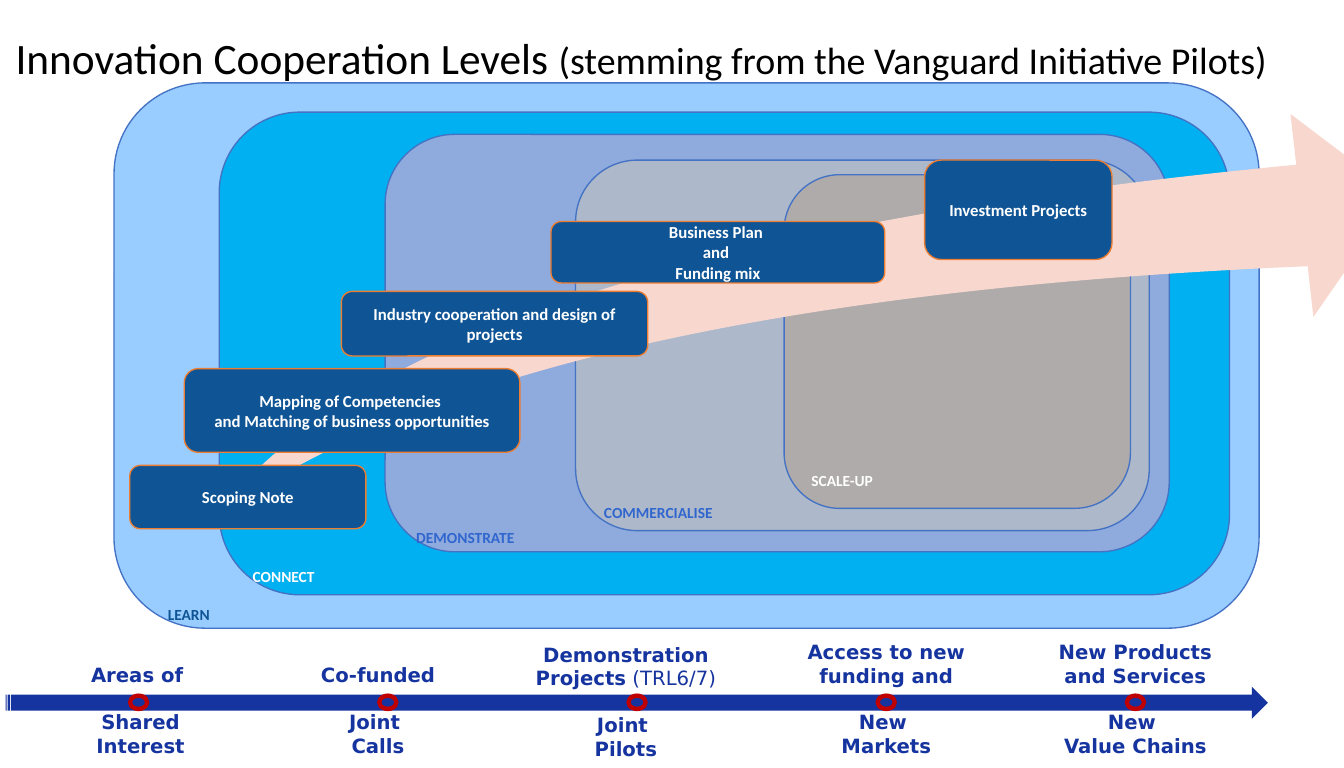
import pptx
import pptx.util
import pptx.dml.color
import pptx.enum.shapes
import pptx.enum.text

Cm, Pt = pptx.util.Cm, pptx.util.Pt
hue = pptx.dml.color.RGBColor.from_string
KIND = pptx.enum.shapes.MSO_SHAPE
ALIGN = pptx.enum.text.PP_ALIGN
ANCHOR = pptx.enum.text.MSO_ANCHOR
FIT = pptx.enum.text.MSO_AUTO_SIZE


def draw(kind, spot, fill, edge=None, width=1):
    shape = slide.shapes.add_shape(kind, *[Cm(n) for n in spot])
    shape.shadow.inherit = False
    shape.fill.solid()
    shape.fill.fore_color.rgb = hue(fill)
    if edge:
        shape.line.color.rgb = hue(edge)
        shape.line.width = Pt(width)
    else:
        shape.line.fill.background()
    return shape


def write(para, text, color, look):
    for row, part in enumerate(text.split("\n")):
        if row:
            para.add_line_break()
        run = para.add_run()
        run.text = part
        run.font.color.rgb = hue(color)
        for name, value in look.items():
            setattr(run.font, name, value)


deck = pptx.Presentation()
deck.slide_width, deck.slide_height = Cm(35), Cm(20)
slide = deck.slides.add_slide(deck.slide_layouts[5])

title = slide.shapes.title
title.left, title.top, title.width, title.height = Cm(0.15), Cm(0.69), Cm(34.85), Cm(2.29)
frame = title.text_frame
frame.word_wrap = True
frame.auto_size = FIT.NONE
frame.vertical_anchor = ANCHOR.TOP
para = frame.paragraphs[0]
para.alignment = ALIGN.LEFT
write(para, "Innovation Cooperation Levels ", "000000", {"name": "Calibri", "size": Pt(32)})
write(para, "(stemming from the Vanguard Initiative Pilots)", "000000",
      {"name": "Calibri", "size": Pt(28)})

levels = [
    ("LEARN", (2.97, 2.16, 29.82, 14.2), "99CCFF", "0F5494", 4.37, 16),
    ("CONNECT", (5.71, 2.92, 26.31, 12.57), "00B0F0", "FFFFFF", 6.58, 15),
    ("DEMONSTRATE", (10.03, 3.5, 20.42, 10.87), "8FAADC", "3166CF", 10.84, 13.99),
    ("COMMERCIALISE", (14.99, 4.17, 14.94, 9.65), "ADB9CA", "3166CF", 15.73, 13.34),
    ("SCALE-UP", (20.42, 4.55, 9.02, 8.69), "AFABAB", "FFFFFF", 21.13, 12.5),
]
small = {"name": "Calibri", "size": Pt(11.4), "bold": True}
for text, spot, fill, color, left, mid in levels:
    draw(KIND.ROUNDED_RECTANGLE, spot, fill, "4472C4")
    label = slide.shapes.add_textbox(Cm(left), Cm(mid - 0.3), Cm(4), Cm(0.6))
    frame = label.text_frame
    frame.word_wrap = True
    frame.vertical_anchor = ANCHOR.MIDDLE
    for side in ("left", "top", "right", "bottom"):
        setattr(frame, "margin_" + side, 0)
    write(frame.paragraphs[0], text, color, small)

swoosh = draw(KIND.SWOOSH_ARROW, (5.54, 2.97, 30.86, 10.57), "F8D7CE")
swoosh.adjustments[0] = swoosh.adjustments[1] = 0.25

steps = [
    (["Mapping of Competencies \nand Matching of business opportunities"],
     (4.8, 9.6, 8.74, 2.18)),
    (["Scoping Note"], (3.38, 12.12, 6.15, 1.65)),
    (["Industry cooperation and design of projects"], (8.89, 7.59, 7.98, 1.68)),
    (["Business Plan ", "and ", "Funding mix"], (14.35, 5.77, 8.69, 1.6)),
    (["Investment Projects"], (24.08, 4.17, 4.88, 2.59)),
]
strong = {"name": "Calibri", "size": Pt(12.4), "bold": True}
for lines, spot in steps:
    frame = draw(KIND.ROUNDED_RECTANGLE, spot, "0F5494", "ED7D31").text_frame
    frame.word_wrap = True
    frame.vertical_anchor = ANCHOR.MIDDLE
    for row, text in enumerate(lines):
        para = frame.add_paragraph() if row else frame.paragraphs[0]
        para.alignment = ALIGN.CENTER
        write(para, text, "FFFFFF", strong)

draw(KIND.STRIPED_RIGHT_ARROW, (0.15, 17.88, 32.87, 0.84), "16349F")

stages = [
    ("Areas of ", "", "Shared Interest", (1.45, 17.15, 4.42, 2.82)),
    ("Co-funded", "", "Joint \nCalls", (7.37, 17.15, 4.95, 2.82)),
    ("Demonstration Projects", " (TRL6/7)", "Joint \nPilots", (12.67, 16.61, 7.26, 3.39)),
    ("Access to new funding and", "", "New \nMarkets", (19.84, 16.54, 6.48, 3.45)),
    ("New Products\nand Services", "", "New \nValue Chains", (26.34, 16.54, 6.45, 3.45)),
]
bold = {"name": "DejaVu Sans", "size": Pt(14.5), "bold": True}
plain = {**bold, "bold": False}
for col, (head, note, tail, spot) in enumerate(stages):
    draw(KIND.DONUT, (3.33 + 6.49 * col, 18.06, 0.56, 0.46), "C00000")
    frame = slide.shapes.add_textbox(*[Cm(n) for n in spot]).text_frame
    frame.word_wrap = True
    top, base = frame.paragraphs[0], frame.add_paragraph()
    top.alignment = base.alignment = ALIGN.CENTER
    base.space_before = Pt(17)
    write(top, head, "16349F", bold)
    if note:
        write(top, note, "16349F", plain)
    write(base, tail, "16349F", bold)

deck.save("out.pptx")
